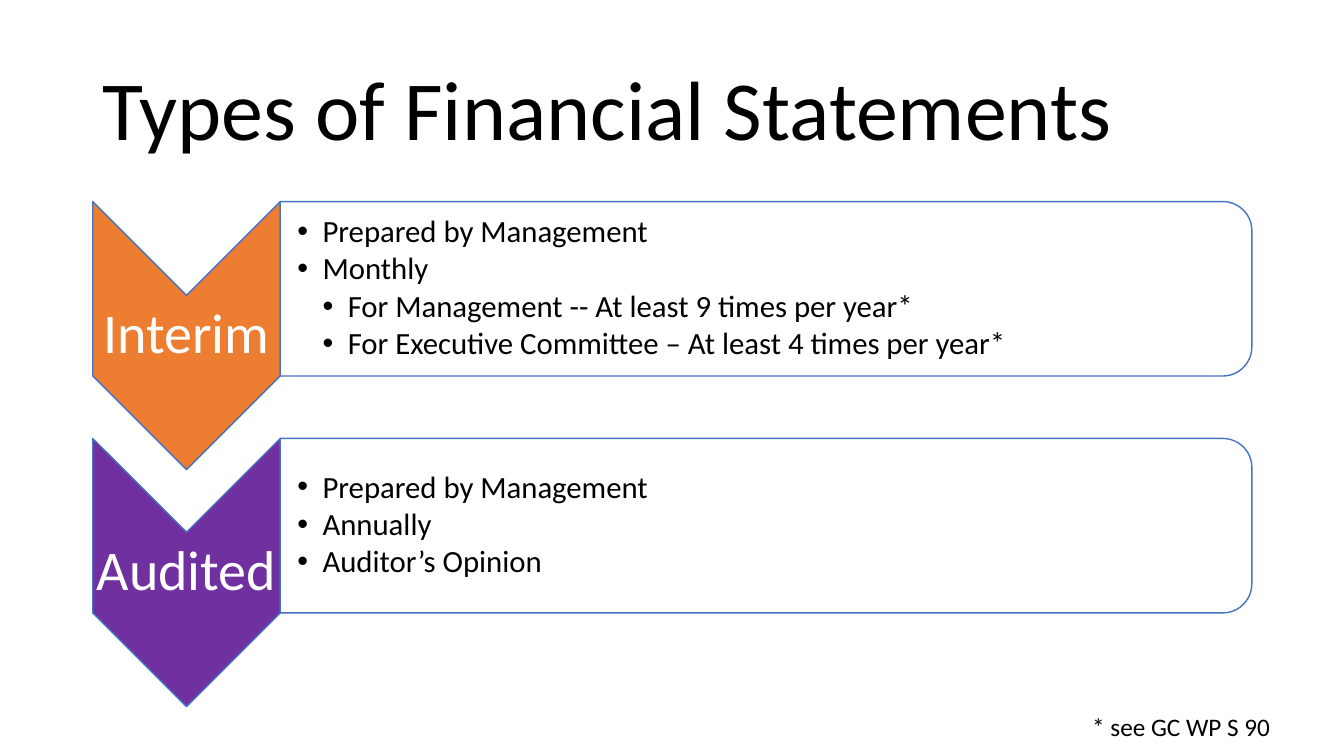
from lxml.etree import SubElement
from pptx import Presentation
from pptx.dml.color import RGBColor
from pptx.enum.shapes import MSO_SHAPE as Kind
from pptx.enum.text import MSO_ANCHOR as Anchor, MSO_AUTO_SIZE as Fit, PP_ALIGN as Align
from pptx.oxml.ns import qn
from pptx.util import Pt

HUES = {"ink": "000000", "paper": "FFFFFF", "edge": "4472C4",
        "orange": "ED7D31", "purple": "7030A0"}
FONT = "Calibri"

# Row geometry, in points
LEFT, TOP, PITCH = 66.2, 144, 169.2
ARROW_W, ARROW_H = 134, 191.5
PANEL_W, PANEL_H = 694, 124.6

ROWS = [
    ("Interim", "orange", [
        ("Prepared by Management", 0),
        ("Monthly", 0),
        ("For Management -- At least 9 times per year*", 1),
        ("For Executive Committee – At least 4 times per year*", 1),
    ]),
    ("Audited", "purple", [
        ("Prepared by Management", 0),
        ("Annually", 0),
        ("Auditor’s Opinion", 0),
    ]),
]


class Deck:
    def __init__(self):
        self.prs = Presentation()
        self.prs.slide_width, self.prs.slide_height = Pt(960), Pt(540)
        self.page = self.prs.slides.add_slide(self.prs.slide_layouts[3])
        self.holders = {h.placeholder_format.idx: h for h in self.page.placeholders}

    def color(self, name):
        return RGBColor.from_string(HUES[name])

    def place(self, item, left, top, width, height):
        item.left, item.top = Pt(left), Pt(top)
        item.width, item.height = Pt(width), Pt(height)

    def frame(self, item, insets=(7.2, 3.6, 7.2, 3.6), fit=Fit.NONE, anchor=Anchor.MIDDLE):
        text = item.text_frame
        text.word_wrap, text.auto_size, text.vertical_anchor = True, fit, anchor
        (text.margin_left, text.margin_top,
         text.margin_right, text.margin_bottom) = map(Pt, insets)
        return text

    def style(self, para, size, hue="ink", align=Align.LEFT, lead=0.9, after=0):
        para.alignment, para.line_spacing = align, lead
        para.space_before, para.space_after = Pt(0), Pt(after)
        font = para.font
        font.name, font.size = FONT, Pt(size)
        font.color.rgb = self.color(hue)

    def title(self, words, *box):
        item = self.page.shapes.title
        self.place(item, *box)
        text = self.frame(item)
        text.text = words
        self.style(text.paragraphs[0], 60)

    def turned(self, kind, hue, left, top, width, height, clear=0):
        """Shape turned a quarter, given by the box it fills once turned."""
        shift = (width - height) / 2
        item = self.page.shapes.add_shape(
            kind, Pt(left + shift), Pt(top - shift), Pt(height), Pt(width))
        item.rotation = 90
        item.shadow.inherit = False
        item.fill.solid()
        item.fill.fore_color.rgb = self.color(hue)
        item.line.color.rgb = self.color("edge")
        item.line.width = Pt(1)
        if clear:
            tint = item.element.spPr.find(qn("a:solidFill"))[0]
            SubElement(tint, qn("a:alpha"), val=str((100 - clear) * 1000))

    def label(self, words, size, hue, align, box, lead=0.9, **frame):
        item = self.page.shapes.add_textbox(*map(Pt, box))
        text = self.frame(item, **frame)
        text.text = words
        self.style(text.paragraphs[0], size, hue, align, lead)

    def bullets(self, idx, items, *box):
        item = self.holders[idx]
        self.place(item, *box)
        self.page.shapes.element.append(item.element)  # bring to front
        text = self.frame(item, (12.2, 1.4, 1.4, 1.4))
        text.text = "\n".join(words for words, _ in items)
        for para, (_, level) in zip(text.paragraphs, items):
            para.level = level
            props = para._p.get_or_add_pPr()
            props.set("marL", str(Pt(18 * (level + 1))))
            props.set("indent", str(Pt(-18)))
            self.style(para, 22, after=3)
            # Bullet marks stand just before the default run properties
            base = props.find(qn("a:defRPr"))
            for tag, key, val in (("a:buFont", "typeface", "Arial"),
                                  ("a:buChar", "char", "•")):
                mark = SubElement(props, qn(tag))
                mark.set(key, val)
                base.addprevious(mark)


def main():
    deck = Deck()
    deck.title("Types of Financial Statements", LEFT, 28.8, 828, 104.4)

    # One arrow, panel and list per statement type
    side = LEFT + ARROW_W
    for i, (name, hue, items) in enumerate(ROWS):
        top = TOP + i * PITCH
        deck.turned(Kind.CHEVRON, hue, LEFT, top, ARROW_W, ARROW_H)
        deck.label(name, 40, "paper", Align.CENTER, (LEFT, top + 67, ARROW_W, 57.6),
                   insets=(2, 2, 2, 2))
        deck.turned(Kind.ROUND_2_SAME_RECTANGLE, "paper", side, top,
                    PANEL_W, PANEL_H, clear=10)
        deck.bullets(i + 1, items, side, top + 6, 687.6, 112.3)

    # Footnote
    deck.label("* see GC WP S 90", 18, "ink", Align.RIGHT, (742.3, 504.7, 172, 28.8),
               lead=1, fit=Fit.SHAPE_TO_FIT_TEXT, anchor=Anchor.TOP)
    deck.prs.save("out.pptx")


if __name__ == "__main__":
    main()
